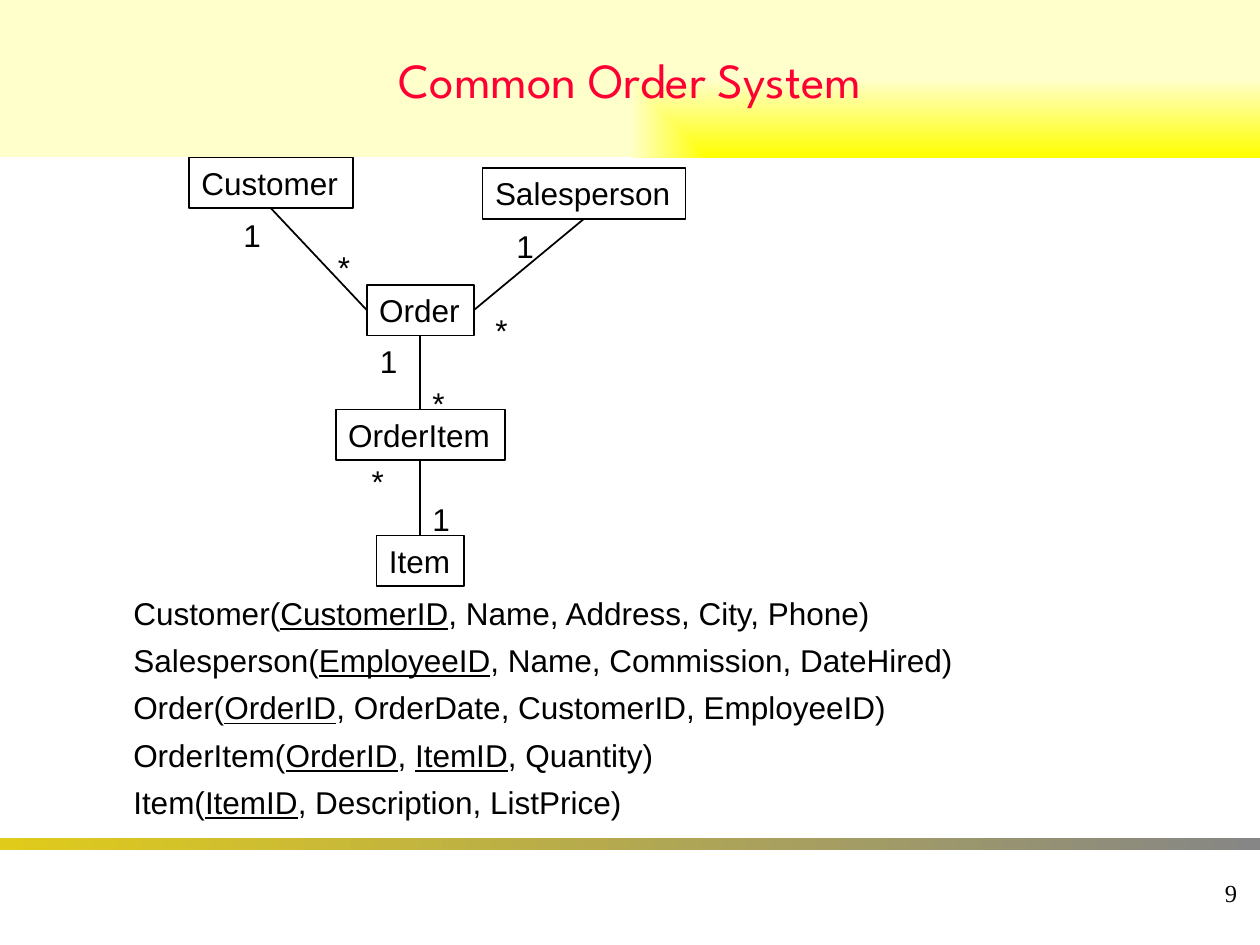
from dataclasses import dataclass
from typing import Any

from lxml import etree
from pptx import Presentation
from pptx.dml.color import RGBColor
from pptx.enum.shapes import MSO_CONNECTOR, MSO_SHAPE
from pptx.enum.text import MSO_ANCHOR, MSO_AUTO_SIZE, PP_ALIGN
from pptx.oxml.ns import qn
from pptx.util import Pt

RECTANGLE, STRAIGHT = MSO_SHAPE.RECTANGLE, MSO_CONNECTOR.STRAIGHT
TOP, MIDDLE = MSO_ANCHOR.TOP, MSO_ANCHOR.MIDDLE
LEFT, CENTER, RIGHT = PP_ALIGN.LEFT, PP_ALIGN.CENTER, PP_ALIGN.RIGHT
FIT, FIXED = MSO_AUTO_SIZE.SHAPE_TO_FIT_TEXT, MSO_AUTO_SIZE.NONE

BLACK = RGBColor(0x00, 0x00, 0x00)
RED = RGBColor(0xFF, 0x00, 0x33)
YELLOW = RGBColor(0xFF, 0xFF, 0x00)
CREAM = RGBColor(0xFF, 0xFF, 0xCC)
GOLD = RGBColor(0xE0, 0xCB, 0x1B)
GRAY = RGBColor(0x86, 0x86, 0x86)

BODY = {"name": "Arial", "size": Pt(18)}
HEADING = {"name": "League Spartan", "size": Pt(28)}
FOOTER = {"name": "Times New Roman", "size": Pt(14)}

SLIDE_WIDTH, SLIDE_HEIGHT = 720, 540
LINE_HEIGHT = 29
COLUMN = 240.2
TOP_SITE, LEFT_SITE, BOTTOM_SITE, RIGHT_SITE = range(4)


@dataclass
class Entity:
    name: str
    center: float
    top: float
    width: float


@dataclass
class Relation:
    source: str
    target: str
    target_site: int


@dataclass
class Multiplicity:
    symbol: str
    left: float
    top: float


ENTITIES = [
    Entity("Customer", 154.8, 90, 93.6),
    Entity("Order", COLUMN, 162.7, 61.2),
    Entity("Salesperson", 333.8, 96, 116),
    Entity("Item", COLUMN, 306, 50),
    Entity("OrderItem", COLUMN, 234, 96.6),
]
RELATIONS = [
    Relation("Salesperson", "Order", RIGHT_SITE),
    Relation("Customer", "Order", LEFT_SITE),
    Relation("Order", "OrderItem", TOP_SITE),
    Relation("OrderItem", "Item", TOP_SITE),
]
MULTIPLICITIES = [
    Multiplicity("1", 132, 120),
    Multiplicity("*", 186, 138),
    Multiplicity("1", 288, 126),
    Multiplicity("*", 276, 174),
    Multiplicity("1", 210, 192),
    Multiplicity("1", 240, 282),
    Multiplicity("*", 205.2, 260.6),
    Multiplicity("*", 240, 216),
]
SYMBOL_WIDTHS = {"1": 24.4, "*": 21.4}
SCHEMA = [
    "Customer(_CustomerID_, Name, Address, City, Phone)",
    "Salesperson(_EmployeeID_, Name, Commission, DateHired)",
    "Order(_OrderID_, OrderDate, CustomerID, EmployeeID)",
    "OrderItem(_OrderID_, _ItemID_, Quantity)",
    "Item(_ItemID_, Description, ListPrice)",
]


def write(box: Any, lines: list[str], style: dict[str, Any], color: RGBColor = BLACK,
          align: Any = LEFT, anchor: Any = TOP, wrap: bool = False,
          resize: Any = FIT, spacing: float = 1) -> None:
    """Fill a box with lines in which underscores enclose underlined words."""
    frame = box.text_frame
    settings = {"word_wrap": wrap, "auto_size": resize, "vertical_anchor": anchor}
    for key, value in settings.items():
        setattr(frame, key, value)
    for index, line in enumerate(lines):
        para = frame.add_paragraph() if index else frame.paragraphs[0]
        para.alignment, para.line_spacing = align, spacing
        for part, words in enumerate(line.split("_")):
            span = para.add_run()
            span.text = words
            for key, value in {**style, "underline": part % 2 == 1}.items():
                setattr(span.font, key, value)
            span.font.color.rgb = color


def add_text(slide: Any, left: float, top: float, width: float, height: float,
             lines: list[str], style: dict[str, Any], **options: Any) -> None:
    """Add a text box."""
    box = slide.shapes.add_textbox(Pt(left), Pt(top), Pt(width), Pt(height))
    write(box, lines, style, **options)


def add_band(slide: Any, top: float, height: float, start: RGBColor, end: RGBColor) -> Any:
    """Add a full-width band with a horizontal gradient."""
    band = slide.shapes.add_shape(RECTANGLE, 0, Pt(top), Pt(SLIDE_WIDTH), Pt(height))
    band.shadow.inherit = False
    band.line.fill.background()
    band.fill.gradient()
    band.fill.gradient_angle = 0
    for stop, color in zip(band.fill.gradient_stops, (start, end)):
        stop.color.rgb = color
    return band


def focus_on_corner(band: Any) -> None:
    """Turn a linear gradient into one spreading from the bottom right corner."""
    linear = band.element.spPr.find(".//" + qn("a:lin"))
    gradient = linear.getparent()
    gradient.remove(linear)
    spread = etree.SubElement(gradient, qn("a:path"), {"path": "rect"})
    etree.SubElement(spread, qn("a:fillToRect"), {"l": "100000", "t": "100000"})


def add_entity(slide: Any, entity: Entity) -> Any:
    """Add an outlined entity box."""
    box = slide.shapes.add_shape(RECTANGLE, Pt(entity.center - entity.width / 2),
                                 Pt(entity.top), Pt(entity.width), Pt(LINE_HEIGHT))
    box.shadow.inherit = False
    box.fill.background()
    box.line.color.rgb, box.line.width = BLACK, Pt(1)
    write(box, [entity.name], BODY)
    return box


def add_relation(slide: Any, relation: Relation, boxes: dict[str, Any]) -> None:
    """Connect the bottom of one entity box to a side of another."""
    line = slide.shapes.add_connector(STRAIGHT, 0, 0, 0, 0)
    line.begin_connect(boxes[relation.source], BOTTOM_SITE)
    line.end_connect(boxes[relation.target], relation.target_site)
    line.line.color.rgb, line.line.width = BLACK, Pt(1)
    etree.SubElement(line.element.spPr, qn("a:effectLst"))


def main() -> None:
    """Build and save the slide."""
    deck = Presentation()
    deck.slide_width, deck.slide_height = Pt(SLIDE_WIDTH), Pt(SLIDE_HEIGHT)
    slide = deck.slides.add_slide(deck.slide_layouts[6])

    add_band(slide, 478.8, 7.2, GOLD, GRAY)
    add_text(slide, 564, 492, 150, 36, ["9"], FOOTER,
             align=RIGHT, anchor=MIDDLE, resize=FIXED)
    title = add_band(slide, 0, 90, YELLOW, CREAM)
    focus_on_corner(title)
    write(title, ["Common Order System"], HEADING, color=RED,
          align=CENTER, anchor=MIDDLE, wrap=True, resize=FIXED)

    boxes = {entity.name: add_entity(slide, entity) for entity in ENTITIES}
    for label in MULTIPLICITIES:
        add_text(slide, label.left, label.top, SYMBOL_WIDTHS[label.symbol],
                 LINE_HEIGHT, [label.symbol], BODY)
    for relation in RELATIONS:
        add_relation(slide, relation, boxes)
    add_text(slide, 69.1, 330.5, 487.4, 143.3, SCHEMA, BODY, spacing=1.25)

    deck.save("out.pptx")


if __name__ == "__main__":
    main()
